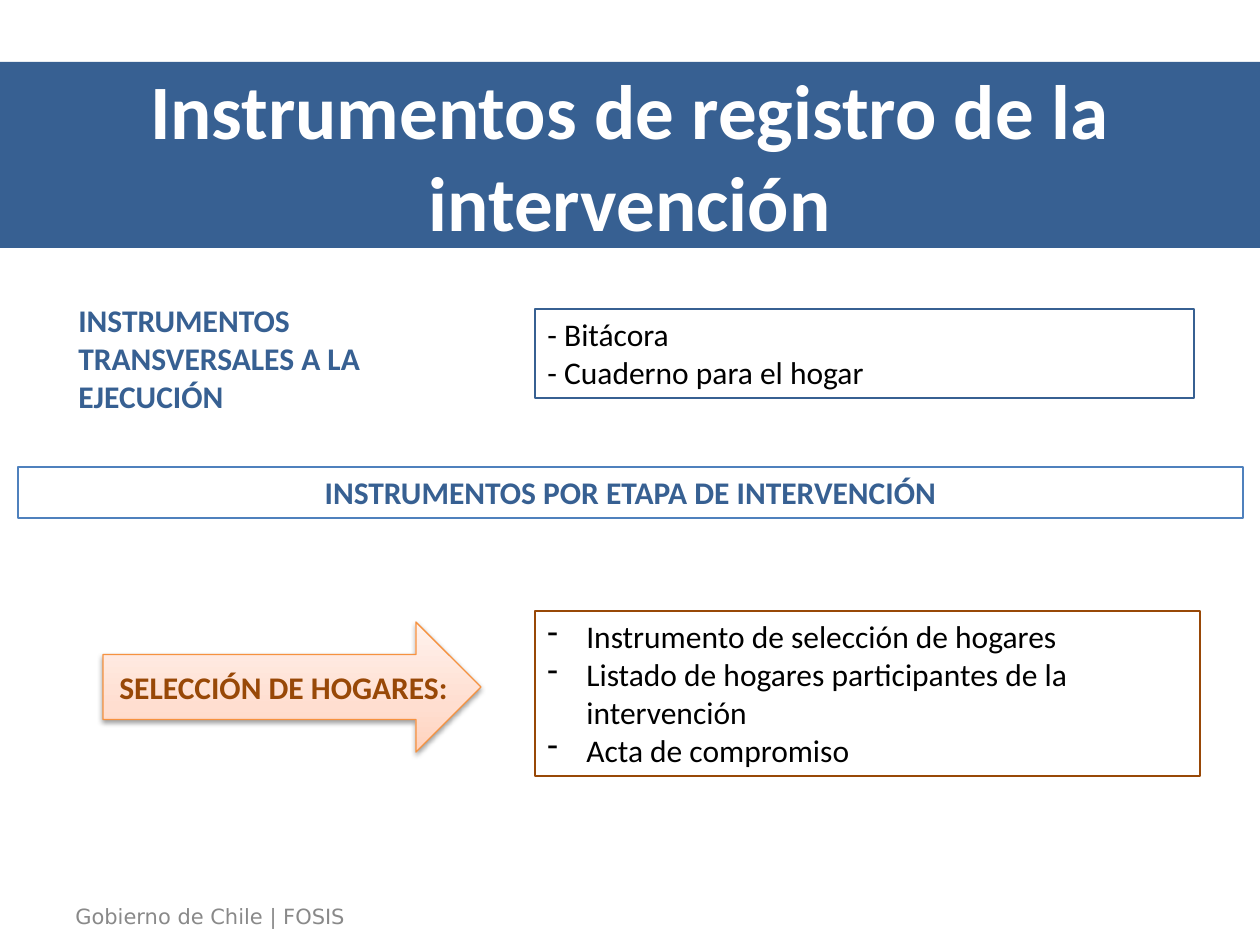
from copy import deepcopy
from dataclasses import dataclass, field

from lxml import etree
from pptx import Presentation
from pptx import util as u
from pptx.dml.color import RGBColor
from pptx.enum import shapes, text
from pptx.oxml.ns import qn

EMU_PER_PX = u.Inches(1) / 126
BLUE, BROWN = "376092", "984807"


@dataclass(frozen=True)
class Panel:
    """A text box, or a rectangle when it has a fill or an outline."""
    box: tuple[int, int, int, int]
    lines: tuple[str, ...]
    color: str = "000000"
    size: int = 18
    bold: bool = False
    font: str = "Calibri"
    fill: str | None = None
    outline: str | None = None
    bullet: str | None = None
    align: text.PP_ALIGN = text.PP_ALIGN.LEFT
    frame: dict = field(default_factory=dict)


def px(length: int) -> u.Emu:
    return u.Emu(round(length * EMU_PER_PX))


def rgb(value: str) -> RGBColor:
    return RGBColor.from_string(value)


def set_all(target, values: dict) -> None:
    for name, value in values.items():
        setattr(target, name, value)


def add_bullet(paragraph, char: str, indent: int) -> None:
    properties = paragraph._p.get_or_add_pPr()
    properties.set("marL", str(px(indent)))
    properties.set("indent", str(-px(indent)))
    etree.SubElement(properties, qn("a:buChar"), char=char)


def add_outline(shape, color: str) -> None:
    shape.line.color.rgb = rgb(color)
    shape.line.width = u.Pt(0.75)


def add_panel(slide, panel: Panel) -> None:
    place = [px(length) for length in panel.box]
    if panel.fill or panel.outline:
        shape = slide.shapes.add_shape(shapes.MSO_SHAPE.RECTANGLE, *place)
        shape.shadow.inherit = False
    else:
        shape = slide.shapes.add_textbox(*place)
    if panel.fill:
        shape.fill.solid()
        shape.fill.fore_color.rgb = rgb(panel.fill)
    else:
        shape.fill.background()
    if panel.outline:
        add_outline(shape, panel.outline)
    else:
        shape.line.fill.background()

    frame = shape.text_frame
    set_all(frame, {
        "word_wrap": True,
        "vertical_anchor": text.MSO_ANCHOR.TOP,
        "auto_size": text.MSO_AUTO_SIZE.SHAPE_TO_FIT_TEXT,
        **panel.frame,
    })
    for number, line in enumerate(panel.lines):
        paragraph = frame.add_paragraph() if number else frame.paragraphs[0]
        paragraph.alignment = panel.align
        if panel.bullet:
            add_bullet(paragraph, panel.bullet, indent=39)
        run = paragraph.add_run()
        run.text = line
        set_all(run.font, {"name": panel.font, "size": u.Pt(panel.size), "bold": panel.bold})
        run.font.color.rgb = rgb(panel.color)


def add_stage_arrow(slide, box: tuple[int, int, int, int]) -> None:
    arrow = slide.shapes.add_shape(shapes.MSO_SHAPE.RIGHT_ARROW, *map(px, box))
    add_outline(arrow, "F69240")
    arrow.fill.gradient()
    arrow.fill.gradient_angle = 90
    stop_list = arrow._element.spPr.find(qn("a:gradFill")).find(qn("a:gsLst"))
    stop_list.append(deepcopy(stop_list[0]))
    shades = ((0, "FFD2BD"), (0.35, "FFDED0"), (1, "FFF2ED"))
    for stop, (position, color) in zip(arrow.fill.gradient_stops, shades):
        stop.position = position
        stop.color.rgb = rgb(color)

    arrow.shadow.inherit = False
    effects = arrow._element.spPr.find(qn("a:effectLst"))
    shadow = etree.SubElement(effects, qn("a:outerShdw"), blurRad=str(u.Pt(3.1)),
                              dist=str(u.Pt(1.6)), dir="5400000", rotWithShape="0")
    black = etree.SubElement(shadow, qn("a:srgbClr"), val="000000")
    etree.SubElement(black, qn("a:alpha"), val="38000")


FOOTER = Panel((63, 897, 306, 38), ("Gobierno de Chile | FOSIS",), "898989", 12,
               font="DejaVu Sans", frame={"word_wrap": False})
TITLE = Panel(
    (0, 62, 1260, 186), ("Instrumentos de registro de la intervención",), "FFFFFF", 44, True,
    fill=BLUE, align=text.PP_ALIGN.CENTER,
    frame={
        "auto_size": text.MSO_AUTO_SIZE.NONE,
        "vertical_anchor": text.MSO_ANCHOR.MIDDLE,
        "margin_top": px(13),
        "margin_bottom": px(13),
    },
)
INSTRUMENTS = (
    Panel((66, 295, 416, 127), ("INSTRUMENTOS TRANSVERSALES A LA EJECUCIÓN",), BLUE, bold=True),
    Panel((535, 309, 659, 89), ("- Bitácora", "- Cuaderno para el hogar"), outline=BLUE),
    Panel((18, 467, 1225, 51), ("INSTRUMENTOS POR ETAPA DE INTERVENCIÓN",), BLUE, bold=True,
          outline="4F81BD", align=text.PP_ALIGN.CENTER),
    Panel((107, 662, 381, 51), ("SELECCIÓN DE HOGARES:",), BROWN, bold=True),
    Panel((535, 611, 665, 165),
          ("Instrumento de selección de hogares",
           "Listado de hogares participantes de la intervención",
           "Acta de compromiso"),
          outline=BROWN, bullet="-"),
)


def main() -> None:
    deck = Presentation()
    set_all(deck, {"slide_width": px(1260), "slide_height": px(945)})
    slide = deck.slides.add_slide(deck.slide_layouts[6])
    add_panel(slide, FOOTER)
    add_stage_arrow(slide, (103, 622, 378, 130))
    for panel in (TITLE, *INSTRUMENTS):
        add_panel(slide, panel)
    deck.save("out.pptx")


if __name__ == "__main__":
    main()
